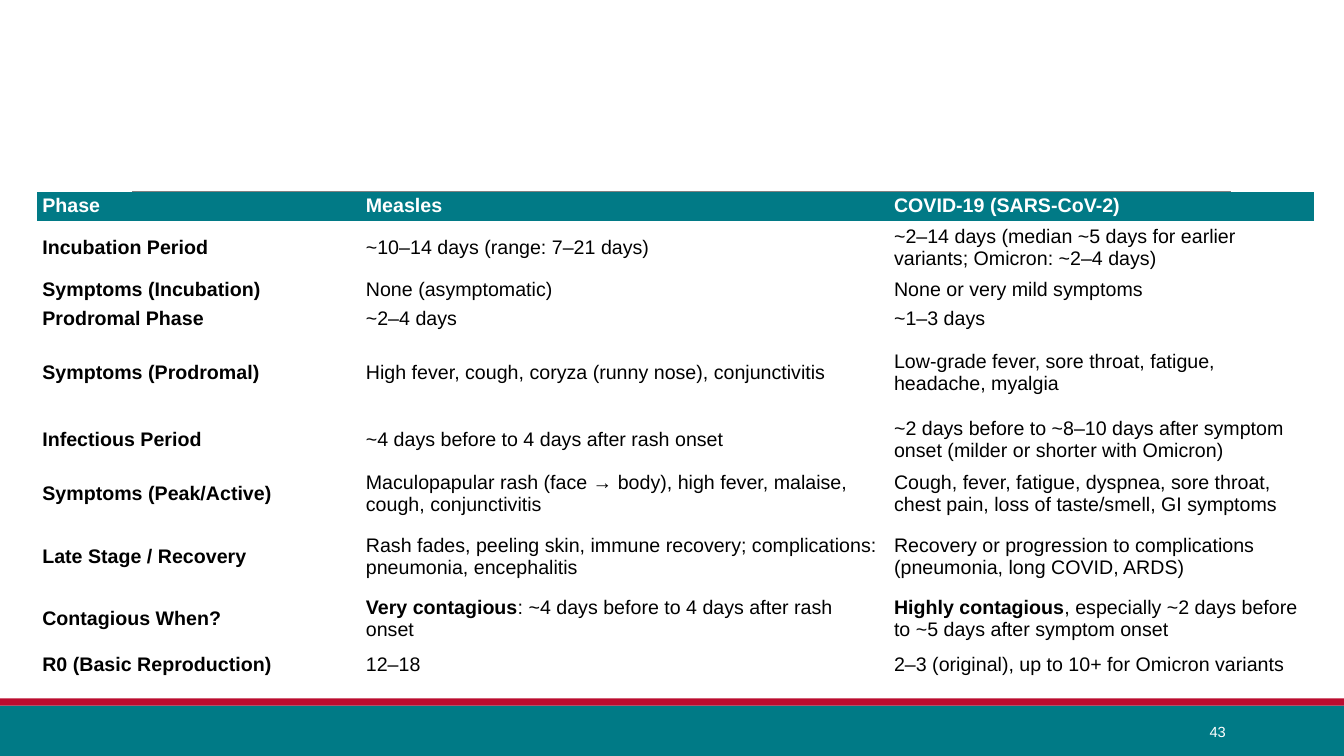
from dataclasses import dataclass

from lxml.etree import SubElement
from pptx import Presentation
from pptx.dml.color import RGBColor as Rgb
from pptx.enum.shapes import MSO_CONNECTOR as Link, MSO_SHAPE as Form
from pptx.enum.text import MSO_ANCHOR as Anchor, PP_ALIGN as Align
from pptx.oxml.ns import qn
from pptx.slide import Slide
from pptx.text.text import TextFrame
from pptx.util import Emu, Inches, Pt

WIDE, HIGH = 160, 90
UNIT = Inches(1) / 12
FONT = "Arial"
PLAIN = "{2D5ABB26-0587-4C30-8999-92F81FD0307C}"
HUES = {
    "teal": "007A86",
    "head": "017A86",
    "red": "BA0C2F",
    "rule": "808080",
    "ink": "000000",
    "white": "FFFFFF",
}


@dataclass(frozen=True)
class Band:
    top: float
    rows: float
    hue: str


@dataclass(frozen=True)
class Phase:
    name: str
    measles: str
    covid: str
    rows: float
    lead: tuple[str, str] = ("", "")


BANDS = [Band(84, 6, "teal"), Band(83.16, 0.84, "red")]
SPANS = [38.52, 62.88, 50.64]
LEFT, TOP = 4.44, 22.8
PHASES = [
    Phase("Phase", "Measles", "COVID-19 (SARS-CoV-2)", 3.48),
    Phase("Incubation Period", "~10–14 days (range: 7–21 days)",
          "~2–14 days (median ~5 days for earlier variants; Omicron: ~2–4 days)", 6.48),
    Phase("Symptoms (Incubation)", "None (asymptomatic)",
          "None or very mild symptoms", 3.48),
    Phase("Prodromal Phase", "~2–4 days", "~1–3 days", 3.48),
    Phase("Symptoms (Prodromal)", "High fever, cough, coryza (runny nose), conjunctivitis",
          "Low-grade fever, sore throat, fatigue, headache, myalgia", 9.36),
    Phase("Infectious Period", "~4 days before to 4 days after rash onset",
          "~2 days before to ~8–10 days after symptom onset (milder or shorter with Omicron)",
          6.48),
    Phase("Symptoms (Peak/Active)",
          "Maculopapular rash (face → body), high fever, malaise, cough, conjunctivitis",
          "Cough, fever, fatigue, dyspnea, sore throat, chest pain, "
          "loss of taste/smell, GI symptoms", 6.48),
    Phase("Late Stage / Recovery",
          "Rash fades, peeling skin, immune recovery; complications: pneumonia, encephalitis",
          "Recovery or progression to complications (pneumonia, long COVID, ARDS)", 8.4),
    Phase("Contagious When?", ": ~4 days before to 4 days after rash onset",
          ", especially ~2 days before to ~5 days after symptom onset", 6.48,
          ("Very contagious", "Highly contagious")),
    Phase("R0 (Basic Reproduction)", "12–18",
          "2–3 (original), up to 10+ for Omicron variants", 4.44),
]


def grid(count: float) -> Emu:
    return Emu(round(count * UNIT))


def paint(hue: str) -> Rgb:
    return Rgb.from_string(HUES[hue])


def write(frame: TextFrame, text: str, *, size: float = 14, hue: str = "ink",
          bold: bool = False, align: Align = Align.LEFT) -> None:
    para = frame.paragraphs[0]
    para.alignment = align
    run = para.add_run()
    run.text = text
    font = run.font
    font.name, font.size, font.bold = FONT, Pt(size), bold
    font.color.rgb = paint(hue)


def draw_band(slide: Slide, band: Band) -> None:
    box = slide.shapes.add_shape(Form.RECTANGLE, 0, grid(band.top), grid(WIDE), grid(band.rows))
    box.shadow.inherit = False
    box.fill.solid()
    box.fill.fore_color.rgb = paint(band.hue)
    box.line.fill.background()


def draw_rule(slide: Slide) -> None:
    rule = slide.shapes.add_connector(Link.STRAIGHT, grid(15.72), grid(TOP),
                                      grid(146.52), grid(TOP))
    rule.line.color.rgb = paint("rule")
    rule.line.width = Pt(0.5)
    SubElement(rule._element.spPr, qn("a:effectLst"))


def draw_table(slide: Slide) -> None:
    table = slide.shapes.add_table(
        len(PHASES), len(SPANS), grid(LEFT), grid(TOP), grid(sum(SPANS)),
        grid(sum(phase.rows for phase in PHASES))).table
    table.horz_banding = False
    table._tbl.tblPr.find(qn("a:tableStyleId")).text = PLAIN
    for column, span in zip(table.columns, SPANS):
        column.width = grid(span)
    for row, phase in enumerate(PHASES):
        table.rows[row].height = grid(phase.rows)
        head = row == 0
        hue = "white" if head else "ink"
        texts = (phase.name, phase.measles, phase.covid)
        for col, (lead, text) in enumerate(zip(("", *phase.lead), texts)):
            cell = table.cell(row, col)
            cell.vertical_anchor = Anchor.MIDDLE
            cell.margin_left = cell.margin_right = grid(0.6)
            cell.margin_top = cell.margin_bottom = grid(0.36)
            if head:
                cell.fill.solid()
                cell.fill.fore_color.rgb = paint("head")
            else:
                cell.fill.background()
            if lead:
                write(cell.text_frame, lead, hue=hue, bold=True)
            write(cell.text_frame, text, hue=hue, bold=head or col == 0)


def draw_number(slide: Slide) -> None:
    box = slide.shapes.add_textbox(grid(129.96), grid(84.72), grid(17.16), grid(4.8))
    frame = box.text_frame
    frame.word_wrap = True
    frame.vertical_anchor = Anchor.MIDDLE
    write(frame, "43", size=10.5, hue="white", align=Align.RIGHT)


def main() -> None:
    deck = Presentation()
    deck.slide_width, deck.slide_height = grid(WIDE), grid(HIGH)
    slide = deck.slides.add_slide(deck.slide_layouts[6])
    for band in BANDS:
        draw_band(slide, band)
    draw_rule(slide)
    draw_table(slide)
    draw_number(slide)
    deck.save("out.pptx")


if __name__ == "__main__":
    main()
